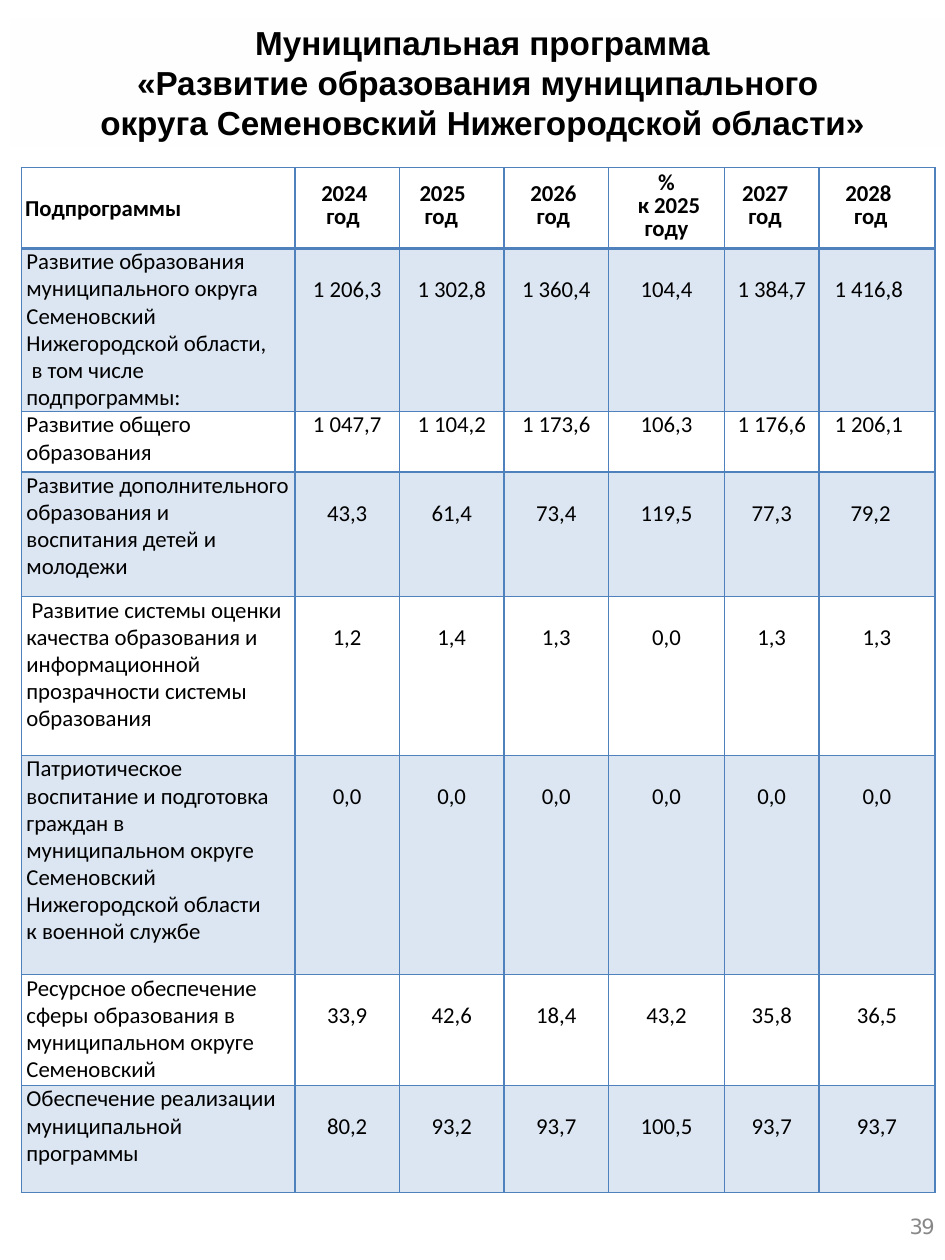
from typing import NamedTuple

from pptx import Presentation
from pptx import util as u
from pptx.dml.color import RGBColor
from pptx.enum import shapes, text
from pptx.oxml import parse_xml
from pptx.oxml.ns import nsdecls, qn

COLORS = {"text": "000000", "border": "4F81BD", "band": "DCE6F2", "number": "888888"}
CENTER = text.PP_ALIGN.CENTER
LINE_DROP = 0.22  # values start one text line below the top of their row
COLUMN_WIDTHS = (2.17, 0.83, 0.83, 0.83, 0.92, 0.75, 0.92)


class Para(NamedTuple):
    text: str
    left: float = 0
    right: float = 0
    first: float = 0


class Program(NamedTuple):
    height: float
    label: tuple[Para, ...]
    values: tuple[str, ...]
    drop: float = LINE_DROP
    last_margin: float = 0


class Year(NamedTuple):
    year: str
    year_left: float
    word_left: float


YEARS = {
    1: Year("2024", 0.21, 0.25),
    2: Year("2025", 0.16, 0.2),
    3: Year("2026", 0.21, 0.26),
    5: Year("2027", 0.14, 0.19),
    6: Year("2028", 0.21, 0.28),
}
HEADER_HEIGHT = 0.64
PROGRAMS = (
    Program(1.28, (Para("Развитие образования муниципального округа Семеновский Нижегородской области,"),
                   Para("в том числе подпрограммы:", right=0.1, first=0.04)),
            ("1 206,3", "1 302,8", "1 360,4", "104,4", "1 384,7", "1 416,8"), last_margin=0.13),
    Program(0.48, (Para("Развитие общего образования"),),
            ("1 047,7", "1 104,2", "1 173,6", "106,3", "1 176,6", "1 206,1"), drop=0, last_margin=0.13),
    Program(0.99, (Para("Развитие дополнительного"),
                   Para("образования и воспитания детей и молодежи", right=0.2)),
            ("43,3", "61,4", "73,4", "119,5", "77,3", "79,2"), last_margin=0.1),
    Program(1.26, (Para("Развитие системы оценки качества образования и информационной "
                        "прозрачности системы образования", first=0.04),),
            ("1,2", "1,4", "1,3", "0,0", "1,3", "1,3")),
    Program(1.74, (Para("Патриотическое воспитание и подготовка граждан в муниципальном "
                        "округе Семеновский", right=0.2),
                   Para("Нижегородской области к военной службе", right=0.2)),
            ("0,0",) * 6),
    Program(0.88, (Para("Ресурсное обеспечение сферы образования в муниципальном округе Семеновский"),),
            ("33,9", "42,6", "18,4", "43,2", "35,8", "36,5")),
    Program(0.85, (Para("Обеспечение реализации"), Para("муниципальной программы")),
            ("80,2", "93,2", "93,7", "100,5", "93,7", "93,7")),
)


def rgb(name: str) -> RGBColor:
    return RGBColor.from_string(COLORS[name])


def set_margins(box, left: float = 0, top: float = 0, right: float = 0) -> None:
    box.margin_left, box.margin_top = u.Inches(left), u.Inches(top)
    box.margin_right, box.margin_bottom = u.Inches(right), 0


def write(tf, paras, size: float, font: str = "Calibri", color: str = "text",
          bold: bool = False, align=None, spacing=None) -> None:
    tf.text = "\n".join(para.text for para in paras)
    for p, para in zip(tf.paragraphs, paras):
        p.alignment, p.line_spacing = align, spacing
        p_pr = p._p.get_or_add_pPr()
        for key, length in (("marL", para.left), ("marR", para.right), ("indent", para.first)):
            if length:
                p_pr.set(key, str(u.Inches(length)))
        for r in p.runs:
            r.font.size, r.font.name, r.font.bold = u.Pt(size), font, bold
            r.font.color.rgb = rgb(color)


def set_borders(cell, bottom: float, top: float) -> None:
    """Outline a cell; the border elements must precede its fill."""
    tc_pr = cell._tc.get_or_add_tcPr()
    for i, (tag, width) in enumerate((("lnL", 1), ("lnR", 1), ("lnT", top), ("lnB", bottom))):
        tc_pr.insert(i, parse_xml(
            f'<a:{tag} {nsdecls("a")} w="{u.Pt(width)}"><a:solidFill>'
            f'<a:srgbClr val="{COLORS["border"]}"/></a:solidFill></a:{tag}>'))


def draw_title(s) -> None:
    sp = s.shapes.add_shape(shapes.MSO_SHAPE.RECTANGLE, u.Inches(0.08), u.Inches(0.15),
                            u.Inches(7.5), u.Inches(1.01))
    sp.shadow.inherit = False
    sp.line.fill.background()
    sp.fill.solid()
    sp.fill.fore_color.rgb = rgb("band")
    color = sp._element.spPr.find(qn("a:solidFill"))[0]
    color.append(parse_xml(f'<a:alpha {nsdecls("a")} val="2000"/>'))
    write(sp.text_frame, (Para("Муниципальная программа\v«Развитие образования муниципального "),
                          Para("округа Семеновский Нижегородской области»")),
          19, "Arial", bold=True, align=CENTER)


def fill_header(table) -> None:
    cell = table.cell(0, 0)
    set_margins(cell, left=0.03, top=LINE_DROP)
    write(cell.text_frame, (Para("Подпрограммы"),), 13, bold=True)
    headings = {col: (Para(y.year, y.year_left), Para("год", y.word_left)) for col, y in YEARS.items()}
    headings[4] = (Para("%"), Para("к 2025", 0.04), Para("году"))
    for col, paras in headings.items():
        cell = table.cell(0, col)
        set_margins(cell)
        cell.vertical_anchor = text.MSO_ANCHOR.MIDDLE
        write(cell.text_frame, paras, 13, bold=True, spacing=u.Pt(13.2),
              align=CENTER if col == 4 else None)


def fill_program(table, row: int, program: Program) -> None:
    cell = table.cell(row, 0)
    set_margins(cell, left=0.04)
    write(cell.text_frame, program.label, 13, spacing=0.98)
    for col, value in enumerate(program.values, 1):
        cell = table.cell(row, col)
        last = col == len(program.values)
        set_margins(cell, top=program.drop, right=program.last_margin if last else 0)
        write(cell.text_frame, (Para(value),), 13, align=CENTER)


def draw_table(s) -> None:
    heights = (HEADER_HEIGHT, *(program.height for program in PROGRAMS))
    table = s.shapes.add_table(len(heights), len(COLUMN_WIDTHS), u.Inches(0.17), u.Inches(1.33),
                               u.Inches(sum(COLUMN_WIDTHS)), u.Inches(sum(heights))).table
    table.first_row = table.horz_banding = False
    for column, width in zip(table.columns, COLUMN_WIDTHS):
        column.width = u.Inches(width)
    fill_header(table)
    for row, program in enumerate(PROGRAMS, 1):
        fill_program(table, row, program)
    for i, (row, height) in enumerate(zip(table.rows, heights)):
        row.height = u.Inches(height)
        for cell in row.cells:
            if i % 2:
                cell.fill.solid()
                cell.fill.fore_color.rgb = rgb("band")
            else:
                cell.fill.background()
            set_borders(cell, bottom=2 if i == 0 else 1, top=2 if i == 1 else 1)


def draw_page_number(s) -> None:
    tf = s.shapes.add_textbox(u.Inches(7.16), u.Inches(9.61), u.Inches(0.31), u.Inches(0.25)).text_frame
    tf.word_wrap = True
    set_margins(tf, left=0.06, top=0.02)
    write(tf, (Para("39"),), 12, "DejaVu Sans", "number")
    tf.paragraphs[0].runs[0].font._element.set("spc", "-100")


def main() -> None:
    prs = Presentation()
    prs.slide_width, prs.slide_height = u.Inches(7.5), u.Inches(10)
    s = prs.slides.add_slide(prs.slide_layouts[6])
    draw_title(s)
    draw_table(s)
    draw_page_number(s)
    prs.save("out.pptx")


if __name__ == "__main__":
    main()
